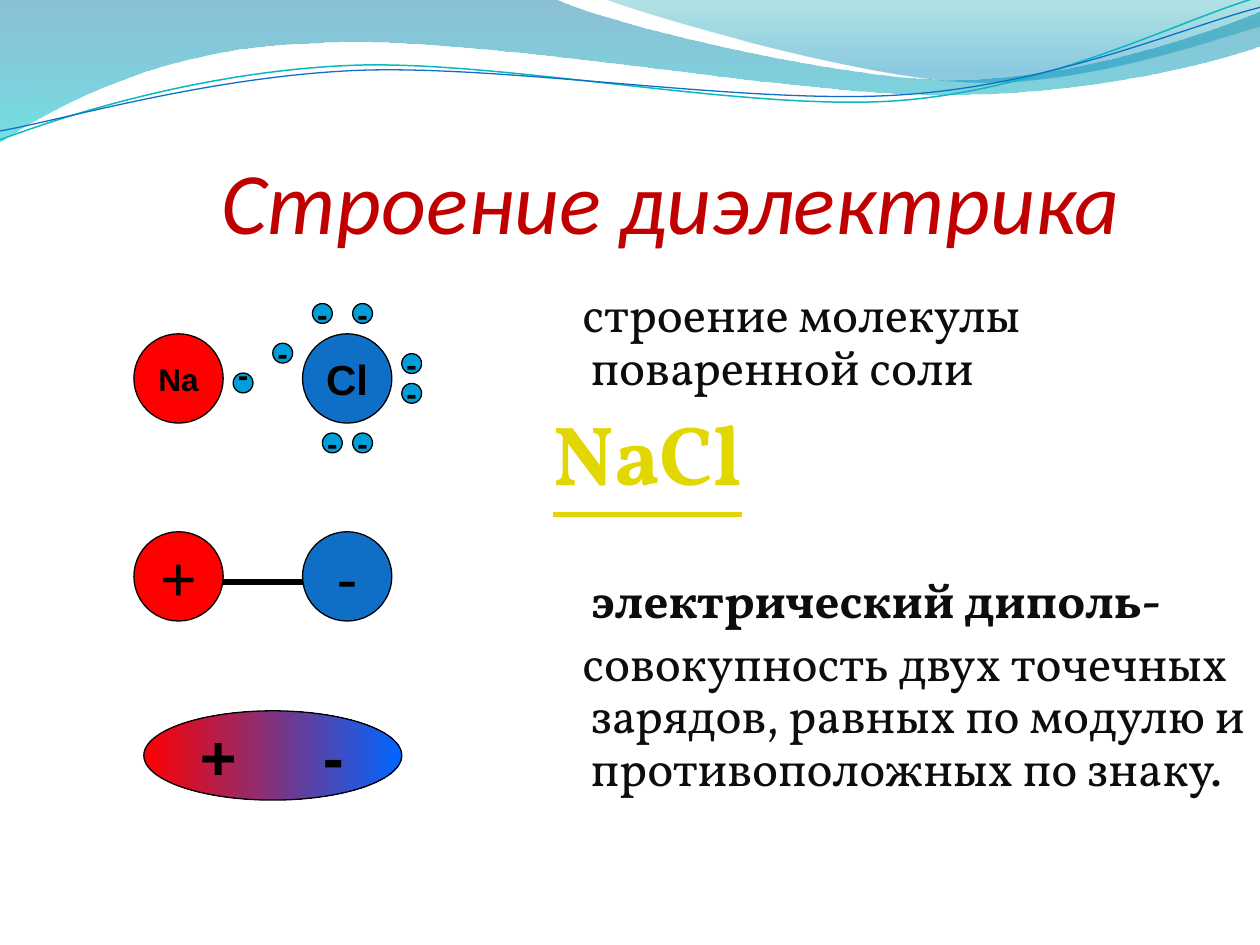
from dataclasses import dataclass

from lxml import etree
from pptx import Presentation
from pptx.dml.color import RGBColor
from pptx.enum.shapes import MSO_CONNECTOR, MSO_SHAPE
from pptx.enum.text import MSO_ANCHOR, MSO_AUTO_SIZE, PP_ALIGN
from pptx.oxml.ns import qn
from pptx.util import Cm, Pt

ELLIPSE = MSO_SHAPE.OVAL
STRAIGHT = MSO_CONNECTOR.STRAIGHT
MIDDLE, BOTTOM = MSO_ANCHOR.MIDDLE, MSO_ANCHOR.BOTTOM
LEFT, CENTER = PP_ALIGN.LEFT, PP_ALIGN.CENTER
NO_FIT = MSO_AUTO_SIZE.NONE


@dataclass(frozen=True)
class Theme:
    title_font: str = "Calibri"
    body_font: str = "Vollkorn"
    label_font: str = "Arial"
    title_size: int = 50
    body_size: int = 28
    formula_size: int = 48
    sign_size: int = 36
    chlorine_size: int = 24
    label_size: int = 18
    title: str = "C00000"
    body: str = "0D0D0D"
    formula: str = "E2D700"
    outline: str = "000000"
    positive: str = "FF0000"
    negative: str = "0F6FC6"
    negative_end: str = "0066FF"
    electron: str = "009DD9"
    teal_line: str = "0AB8BF"
    wide_wave: tuple = ((0, "0074A1", 45), (1, "00C6CF", 55))
    small_wave: tuple = ((0, "00A1A9", 30), (0.8, "008BBF", 45))


THEME = Theme()
ATOM = 1.8
ELECTRON = 0.4
SODIUM_X, CHLORINE_X = 2.7, 6.1
ATOMS_Y, DIPOLE_Y = 6.73, 10.72

WIDE_WAVE = [
    (0, 0), [(11.18, -0.03)],
    [(12.09, 0.43), (16.87, 1.6), (19.25, 1.6)],
    [(21.67, 1.6), (24.33, 0.66), (25.4, 0.23)],
    [(25.43, 0.91)],
    [(24.97, 1.12), (22.1, 1.93), (18.95, 1.91)],
    [(15.8, 1.91), (9.7, 0.71), (6.53, 0.86)],
    [(3.28, 0.91), (1.17, 2.11), (-0.03, 2.87)],
]
SMALL_WAVE = [
    (12.17, -0.03),
    [(12.93, 0.28), (17.32, 1.57), (19.53, 1.65)],
    [(21.74, 1.75), (24.41, 0.81), (25.4, 0.53)],
    [(25.4, 0)],
]
TEAL_CURVE = [
    (0, 2.82),
    [(1.22, 2.36), (4.01, 1.45), (7.04, 1.32)],
    [(10.03, 1.19), (15.06, 2.26), (18.11, 2.03)],
    [(21.16, 1.8), (23.83, 0.38), (25.35, -0.05)],
]
BLUE_CURVE = [
    (0, 2.64),
    [(1.19, 2.44), (4.17, 1.55), (7.19, 1.42)],
    [(10.24, 1.3), (15.16, 2.13), (18.21, 1.91)],
    [(21.29, 1.7), (23.9, 0.53), (25.4, 0.15)],
]
CHLORINE_ELECTRONS = [
    (7.11, 6.12), (6.3, 6.12), (5.5, 6.92), (6.5, 8.73),
    (7.11, 8.73), (8.1, 7.13), (8.1, 7.73),
]


def rgb(color):
    return RGBColor.from_string(color)


def write(para, text, font, size, color, bold=False, italic=False,
          underline=False, align=LEFT):
    para.alignment = align
    span = para.add_run()
    span.text = text
    span.font.name = font
    span.font.size = Pt(size)
    span.font.color.rgb = rgb(color)
    span.font.bold = bold
    span.font.italic = italic
    span.font.underline = underline


def set_outline(shape, color, width):
    shape.line.color.rgb = rgb(color)
    shape.line.width = Pt(width)


def set_gradient(shape, stops, angle):
    shape.fill.gradient()
    shape.fill.gradient_angle = angle
    for stop, (position, color, opacity) in zip(shape.fill.gradient_stops, stops):
        stop.position = position
        stop.color.rgb = rgb(color)
        if opacity < 100:
            for node in shape.fill._xPr.iter(qn("a:srgbClr")):
                if node.get("val") == color:
                    etree.SubElement(node, qn("a:alpha"), val=str(opacity * 1000))


def bend_segments(shape, segments):
    nodes = iter(list(shape._element.iter(qn("a:lnTo"))))
    for segment in segments:
        corners = [next(nodes) for _ in segment]
        if len(corners) == 3:
            bend = etree.Element(qn("a:cubicBezTo"))
            corners[0].addprevious(bend)
            for corner in corners:
                bend.append(corner[0])
                corner.getparent().remove(corner)


def add_curve(page, outline, close):
    start, *segments = outline
    builder = page.shapes.build_freeform(Cm(start[0]), Cm(start[1]))
    points = [(Cm(x), Cm(y)) for segment in segments for x, y in segment]
    builder.add_line_segments(points, close=close)
    shape = builder.convert_to_shape()
    shape.shadow.inherit = False
    bend_segments(shape, segments)
    return shape


def add_wave(page, outline, stops):
    wave = add_curve(page, outline, close=True)
    set_gradient(wave, stops, 270)
    wave.line.fill.background()


def add_wave_line(page, outline, color, width):
    curve = add_curve(page, outline, close=False)
    curve.fill.background()
    set_outline(curve, color, width)


def add_ellipse(page, x, y, width, height, fill=None):
    shape = page.shapes.add_shape(ELLIPSE, Cm(x), Cm(y), Cm(width), Cm(height))
    shape.shadow.inherit = False
    set_outline(shape, THEME.outline, 0.75)
    if fill:
        shape.fill.solid()
        shape.fill.fore_color.rgb = rgb(fill)
    shape.text_frame.vertical_anchor = MIDDLE
    return shape


def add_charge(page, x, y, diameter, fill, text, size, bold=True):
    circle = add_ellipse(page, x, y, diameter, diameter, fill)
    circle.text_frame.word_wrap = False
    write(circle.text_frame.paragraphs[0], text, THEME.label_font, size,
          THEME.outline, bold=bold, align=CENTER)
    return circle


def add_electron(page, x, y):
    return add_charge(page, x, y, ELECTRON, THEME.electron, "-", THEME.label_size)


def add_polarized_ellipse(page):
    shape = add_ellipse(page, 2.9, 14.33, 5.2, ATOM)
    set_gradient(shape, ((0, THEME.positive, 100), (1, THEME.negative_end, 100)), 0)
    frame = shape.text_frame
    frame.word_wrap = True
    frame.margin_left, frame.margin_right = Cm(0.37), 0
    para = frame.paragraphs[0]
    write(para, "+\t-", THEME.label_font, THEME.sign_size, THEME.outline, bold=True)
    tabs = etree.SubElement(para._p.get_or_add_pPr(), qn("a:tabLst"))
    etree.SubElement(tabs, qn("a:tab"), pos=str(Cm(2.48)), algn="l")


def add_bond(page):
    y = Cm(11.73)
    bond = page.shapes.add_connector(STRAIGHT, Cm(SODIUM_X + ATOM), y, Cm(CHLORINE_X), y)
    set_outline(bond, THEME.outline, 3)
    etree.SubElement(bond._element.spPr, qn("a:effectLst"))


def set_title(page):
    title = page.shapes.title
    title.left, title.top, title.width, title.height = Cm(1.27), Cm(1.27), Cm(22.86), Cm(3.81)
    frame = title.text_frame
    frame.auto_size = NO_FIT
    frame.vertical_anchor = BOTTOM
    frame.margin_left, frame.margin_right, frame.margin_bottom = Cm(3.2), 0, 0
    write(frame.paragraphs[0], "Строение диэлектрика", THEME.title_font,
          THEME.title_size, THEME.title, italic=True)


def add_explanation(page):
    box = page.shapes.add_textbox(Cm(10.9), Cm(5.72), Cm(14.5), Cm(11.2))
    frame = box.text_frame
    frame.word_wrap = True
    plain = dict(size=THEME.body_size, color=THEME.body)
    formula = dict(size=THEME.formula_size, color=THEME.formula, bold=True, underline=True)
    lines = [
        ("строение молекулы поваренной соли", -0.17, 5.6, plain),
        ("NaCl", -0.76, 9.6, formula),
        ("электрический диполь-", 0.02, 41.5, dict(plain, bold=True)),
        ("совокупность двух точечных зарядов, равных по модулю и "
         "противоположных по знаку.", -0.17, 5.6, plain),
    ]
    for index, (text, indent, space, style) in enumerate(lines):
        para = frame.add_paragraph() if index else frame.paragraphs[0]
        write(para, text, THEME.body_font, **style)
        para.line_spacing = 0.9
        para.space_before = Pt(space)
        properties = para._p.get_or_add_pPr()
        properties.set("marL", str(Cm(0.76)))
        properties.set("indent", str(Cm(indent)))


def main():
    deck = Presentation()
    deck.slide_width, deck.slide_height = Cm(25.4), Cm(19.05)
    page = deck.slides.add_slide(deck.slide_layouts[5])
    add_wave(page, WIDE_WAVE, THEME.wide_wave)
    add_wave(page, SMALL_WAVE, THEME.small_wave)
    add_wave_line(page, TEAL_CURVE, THEME.teal_line, 0.85)
    add_wave_line(page, BLUE_CURVE, THEME.negative, 0.75)
    set_title(page)
    add_explanation(page)
    add_charge(page, SODIUM_X, ATOMS_Y, ATOM, THEME.positive, "Na", THEME.label_size)
    add_charge(page, CHLORINE_X, ATOMS_Y, ATOM, THEME.negative, "Cl", THEME.chlorine_size)
    add_electron(page, 4.7, 7.52).rotation = 180
    for x, y in CHLORINE_ELECTRONS:
        add_electron(page, x, y)
    add_polarized_ellipse(page)
    for x, fill, sign in ((SODIUM_X, THEME.positive, "+"), (CHLORINE_X, THEME.negative, "-")):
        add_charge(page, x, DIPOLE_Y, ATOM, fill, sign, THEME.sign_size, bold=False)
    add_bond(page)
    deck.save("out.pptx")


if __name__ == "__main__":
    main()
